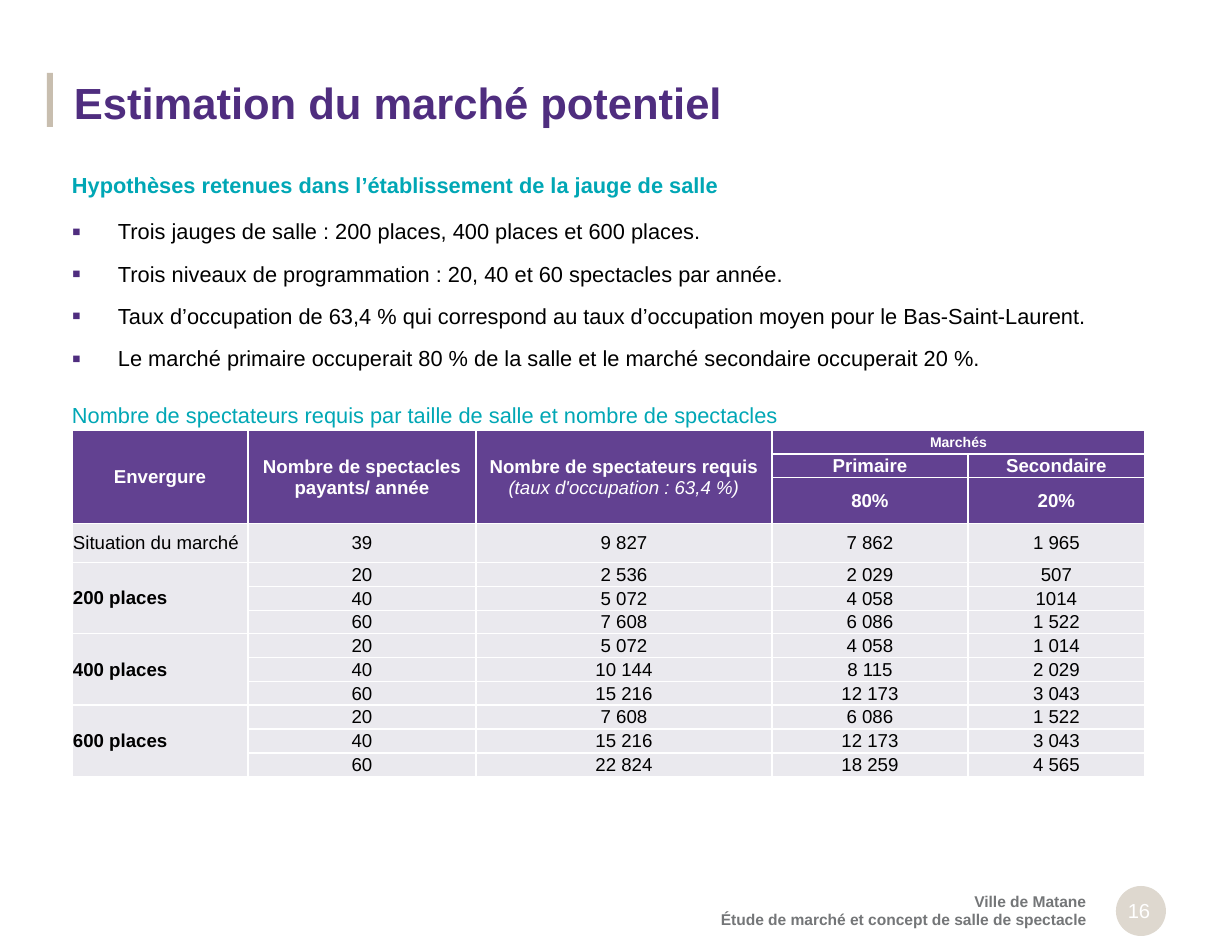
from lxml.etree import SubElement
from pptx import Presentation
from pptx.dml.color import RGBColor
from pptx.enum.shapes import MSO_SHAPE
from pptx.enum.text import MSO_ANCHOR, PP_ALIGN
from pptx.oxml.ns import qn
from pptx.util import Emu, Pt

PX = 914400 // 112
FONT = "Arial"
PURPLE = RGBColor(0x4F, 0x2D, 0x7F)
HEADER = RGBColor(0x62, 0x41, 0x91)
TEAL = RGBColor(0x00, 0xA7, 0xB5)
SAND = RGBColor(0xC8, 0xBE, 0xAF)
PALE_SAND = RGBColor(0xDE, 0xD8, 0xCF)
GREY = RGBColor(0x74, 0x76, 0x78)
PALE = RGBColor(0xEA, 0xE9, 0xEE)
WHITE = RGBColor(0xFF, 0xFF, 0xFF)
BLACK = RGBColor(0, 0, 0)

TITLE = "Estimation du marché potentiel"
HEADING = "Hypothèses retenues dans l’établissement de la jauge de salle"
BULLETS = [
    "Trois jauges de salle : 200 places, 400 places et 600 places.",
    "Trois niveaux de programmation : 20, 40 et 60 spectacles par année.",
    "Taux d’occupation de 63,4 % qui correspond au taux d’occupation moyen pour le Bas-Saint-Laurent.",
    "Le marché primaire occuperait 80 % de la salle et le marché secondaire occuperait 20 %.",
]
CAPTION = "Nombre de spectateurs requis par taille de salle et nombre de spectacles"
FOOTER = "Ville de Matane\nÉtude de marché et concept de salle de spectacle"
PAGE_NUMBER = "16"

HEADER_ROWS = [
    ["Envergure", "Nombre de spectacles payants/ année", "Nombre de spectateurs requis", "Marchés", ""],
    ["", "", "", "Primaire", "Secondaire"],
    ["", "", "", "80%", "20%"],
]
OCCUPANCY = "(taux d'occupation : 63,4 %)"
MARKET_ROWS = [
    ["Situation du marché", "39", "9 827", "7 862", "1 965"],
    ["200 places", "20", "2 536", "2 029", "507"],
    ["", "40", "5 072", "4 058", "1014"],
    ["", "60", "7 608", "6 086", "1 522"],
    ["400 places", "20", "5 072", "4 058", "1 014"],
    ["", "40", "10 144", "8 115", "2 029"],
    ["", "60", "15 216", "12 173", "3 043"],
    ["600 places", "20", "7 608", "6 086", "1 522"],
    ["", "40", "15 216", "12 173", "3 043"],
    ["", "60", "22 824", "18 259", "4 565"],
]
COLUMN_WIDTHS = [176, 228, 296, 196, 177]
ROW_HEIGHTS = [24, 23, 43, 39] + [24, 24, 23] * 3
# first row, first column, last row, last column
MERGES = [(0, column, 2, column) for column in range(3)] + [(0, 3, 0, 4)]
MERGES += [(row, 0, row + 2, 0) for row in (4, 7, 10)]


def px(*lengths):
    return [Emu(length * PX) for length in lengths]


def add_text(frame, text, size=14, color=BLACK, bold=False, italic=False,
             align=PP_ALIGN.LEFT, line=None, before=0, after=0, bullet=False):
    """Write one paragraph, using the frame's first one while it is empty."""
    paragraph = frame.paragraphs[0]
    if paragraph.runs:
        paragraph = frame.add_paragraph()
    paragraph.text = text
    paragraph.alignment = align
    paragraph.space_before, paragraph.space_after = Pt(before), Pt(after)
    if line:
        paragraph.line_spacing = line
    if bullet:
        properties = paragraph._p.get_or_add_pPr()
        properties.set("marL", str(46 * PX))
        properties.set("indent", str(-46 * PX))
        bullet_color = SubElement(properties, qn("a:buClr"))
        SubElement(bullet_color, qn("a:srgbClr"), val=str(PURPLE))
        SubElement(properties, qn("a:buSzPct"), val="120000")
        SubElement(properties, qn("a:buFont"), typeface=FONT)
        SubElement(properties, qn("a:buChar"), char="▪")
    for span in paragraph.runs:
        span.font.name, span.font.size = FONT, Pt(size)
        span.font.bold, span.font.italic = bold, italic
        span.font.color.rgb = color


def add_box(page, left, top, width, height):
    frame = page.shapes.add_textbox(*px(left, top, width, height)).text_frame
    frame.word_wrap = True
    frame.margin_left = frame.margin_right = 0
    return frame


def add_shape(page, kind, left, top, width, height, color):
    shape = page.shapes.add_shape(kind, *px(left, top, width, height))
    shape.shadow.inherit = False
    shape.fill.solid()
    shape.fill.fore_color.rgb = color
    shape.line.fill.background()


def style_cell(cell, color):
    cell.vertical_anchor = MSO_ANCHOR.MIDDLE
    cell.margin_left = cell.margin_right = cell.margin_top = Emu(PX)
    cell.margin_bottom = 0
    properties = cell._tc.get_or_add_tcPr()
    for side in ("lnL", "lnR", "lnT", "lnB"):
        border = SubElement(properties, qn(f"a:{side}"), w=str(Pt(1)))
        fill = SubElement(border, qn("a:solidFill"))
        SubElement(fill, qn("a:srgbClr"), val=str(WHITE))
    cell.fill.solid()
    cell.fill.fore_color.rgb = color


def add_market_table(page, left, top):
    rows = HEADER_ROWS + MARKET_ROWS
    table = page.shapes.add_table(
        len(rows), len(COLUMN_WIDTHS),
        *px(left, top, sum(COLUMN_WIDTHS), sum(ROW_HEIGHTS))).table
    table.horz_banding = False
    for column, width in zip(table.columns, px(*COLUMN_WIDTHS)):
        column.width = width
    for row, height in zip(table.rows, px(*ROW_HEIGHTS)):
        row.height = height
    for r, texts in enumerate(rows):
        in_header = r < len(HEADER_ROWS)
        for c, text in enumerate(texts):
            cell = table.cell(r, c)
            style_cell(cell, HEADER if in_header else PALE)
            if text:
                add_text(cell.text_frame, text,
                         size=9 if text == "Marchés" else 12,
                         color=WHITE if in_header else BLACK,
                         bold=in_header or text.endswith("places"),
                         align=PP_ALIGN.CENTER if in_header or c else PP_ALIGN.LEFT)
    add_text(table.cell(0, 2).text_frame, OCCUPANCY, size=12, color=WHITE,
             italic=True, align=PP_ALIGN.CENTER)
    for first_row, first_column, last_row, last_column in MERGES:
        table.cell(first_row, first_column).merge(table.cell(last_row, last_column))


def main():
    deck = Presentation()
    deck.slide_width, deck.slide_height = px(1232, 952)
    page = deck.slides.add_slide(deck.slide_layouts[6])

    add_shape(page, MSO_SHAPE.RECTANGLE, 47, 73, 6, 54, SAND)
    add_text(add_box(page, 625, 886, 461, 49), FOOTER, size=10, color=GREY,
             bold=True, align=PP_ALIGN.RIGHT)
    add_shape(page, MSO_SHAPE.OVAL, 1116, 886, 50, 50, PALE_SAND)
    add_text(add_box(page, 1105, 893, 68, 30), PAGE_NUMBER, size=13, color=WHITE,
             align=PP_ALIGN.CENTER)
    add_text(add_box(page, 74, 65, 1092, 75), TITLE, size=28, color=PURPLE,
             bold=True, line=Pt(37.4))

    body = add_box(page, 72, 164, 1092, 596)
    add_text(body, HEADING, color=TEAL, bold=True, line=1.1, after=6.6)
    for text in BULLETS:
        add_text(body, text, line=1.1, before=4.4, after=4.4, bullet=True)
    add_text(body, CAPTION, color=TEAL, line=1.1, before=13.2, after=4.4)

    add_market_table(page, 72, 430)
    deck.save("out.pptx")


if __name__ == "__main__":
    main()
